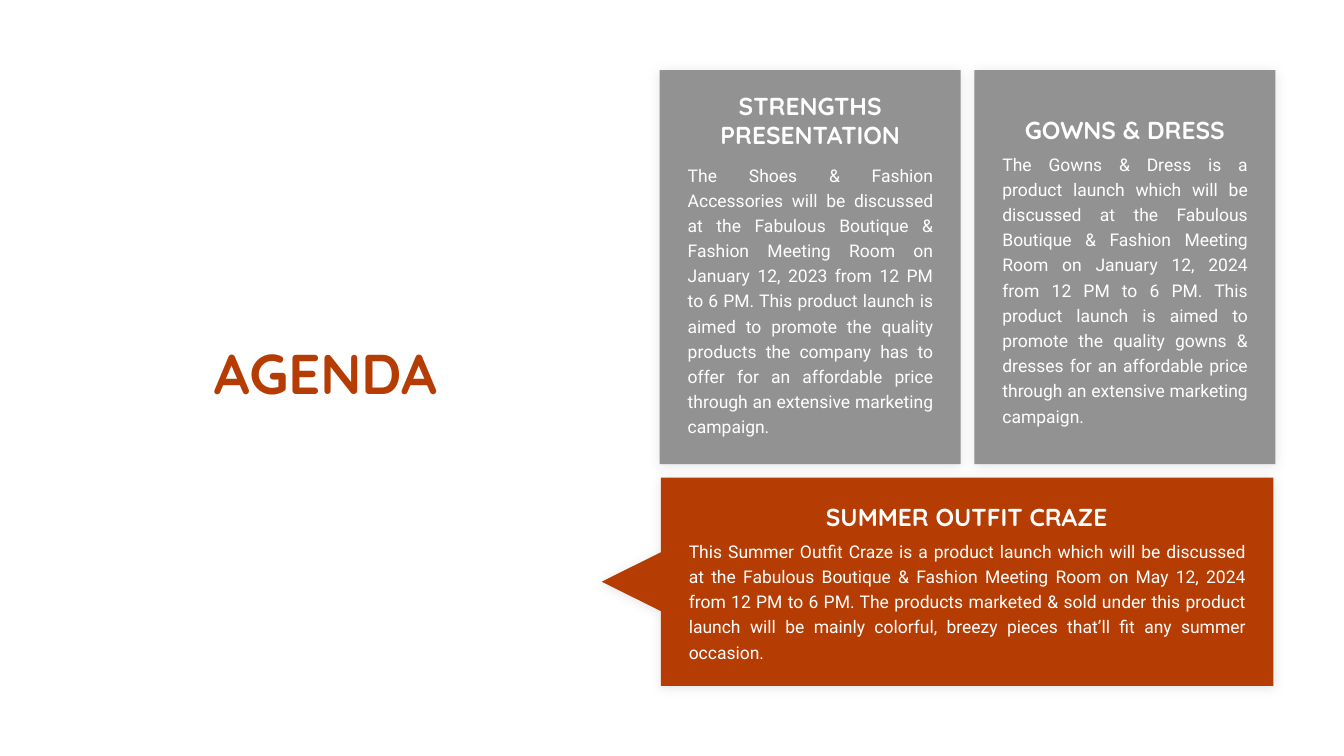
from dataclasses import dataclass

from lxml import etree
from pptx import Presentation
from pptx import util as u
from pptx.dml.color import RGBColor
from pptx.enum import shapes, text
from pptx.oxml import ns

RUST, GRAY, WHITE = "B53D04", "929292", "FFFFFF"
CARD_TOP, CARD_W, CARD_H = 100, 430, 563


@dataclass
class Style:
    font: str
    size: float
    color: str
    bold: bool
    align: text.PP_ALIGN
    space: float


@dataclass
class Label:
    words: str
    left: float
    top: float
    width: float
    height: float
    style: Style


HEAD = Style("Quicksand", 35, WHITE, True, text.PP_ALIGN.CENTER, 0.7)
STACK = Style("Quicksand", 35, WHITE, True, text.PP_ALIGN.CENTER, 1.0)
BODY = Style("Roboto", 25, WHITE, False, text.PP_ALIGN.JUSTIFY, 1.2)
TITLE = Style("Quicksand", 80, RUST, True, text.PP_ALIGN.CENTER, 0.8)

CARDS = [1392, 942.5]
CALLOUT = [(944, 682.5), (944, 789), (859.7, 831), (944, 873),
           (944, 980), (1819, 980), (1819, 682.5)]

LABELS = [
    Label("AGENDA", 250, 467.5, 430, 145, TITLE),
    Label("STRENGTHS\nPRESENTATION", 942.5, 126, CARD_W, 92, STACK),
    Label("The Shoes & Fashion Accessories will be discussed at the Fabulous "
          "Boutique & Fashion Meeting Room on January 12, 2023 from 12 PM to "
          "6 PM. This product launch is aimed to promote the quality products "
          "the company has to offer for an affordable price through an "
          "extensive marketing campaign.", 978.5, 217, 358.5, 420, BODY),
    Label("GOWNS & DRESS", 1392, 166, CARD_W, 50, HEAD),
    Label("The Gowns & Dress is a product launch which will be discussed at "
          "the Fabulous Boutique & Fashion Meeting Room on January 12, 2024 "
          "from 12 PM to 6 PM. This product launch is aimed to promote the "
          "quality gowns & dresses for an affordable price through an "
          "extensive marketing campaign.", 1428, 219, 358.5, 385, BODY),
    Label("SUMMER OUTFIT CRAZE", 1046, 718, 670, 50, HEAD),
    Label("This Summer Outfit Craze is a product launch which will be "
          "discussed at the Fabulous Boutique & Fashion Meeting Room on May "
          "12, 2024 from 12 PM to 6 PM. The products marketed & sold under "
          "this product launch will be mainly colorful, breezy pieces that’ll "
          "fit any summer occasion.", 980, 768.5, 803.5, 176, BODY),
]


def paint(target, color: str) -> None:
    """Apply a hex colour to a fill or font colour."""
    target.rgb = RGBColor.from_string(color)


def finish(shape, color: str) -> None:
    """Fill a shape, drop its line and give it a soft shadow."""
    shape.fill.solid()
    paint(shape.fill.fore_color, color)
    shape.line.fill.background()
    shape.shadow.inherit = False
    effects = shape._element.spPr.find(ns.qn("a:effectLst"))
    shade = etree.SubElement(
        effects, ns.qn("a:outerShdw"), blurRad=str(u.Pt(17)),
        dist=str(u.Pt(2)), dir="5400000", algn="ctr", rotWithShape="0")
    tint = etree.SubElement(shade, ns.qn("a:srgbClr"), val="000000")
    etree.SubElement(tint, ns.qn("a:alpha"), val="10000")


def draw_card(slide, left: float) -> None:
    """Draw one gray card at the given left edge."""
    card = slide.shapes.add_shape(
        shapes.MSO_SHAPE.RECTANGLE, u.Pt(left), u.Pt(CARD_TOP),
        u.Pt(CARD_W), u.Pt(CARD_H))
    finish(card, GRAY)


def draw_callout(slide) -> None:
    """Draw the rust panel that points left to the title."""
    points = [(u.Pt(x), u.Pt(y)) for x, y in CALLOUT]
    outline = slide.shapes.build_freeform(*points[0])
    outline.add_line_segments(points[1:], close=True)
    finish(outline.convert_to_shape(), RUST)


def draw_label(slide, label: Label) -> None:
    """Write one text box in its style."""
    box = slide.shapes.add_textbox(
        u.Pt(label.left), u.Pt(label.top),
        u.Pt(label.width), u.Pt(label.height))
    frame, style = box.text_frame, label.style
    frame.text = label.words
    frame.word_wrap = True
    frame.vertical_anchor = text.MSO_ANCHOR.MIDDLE
    frame.margin_left = frame.margin_right = u.Pt(4)
    frame.margin_top = frame.margin_bottom = u.Pt(4)
    for line in frame.paragraphs:
        line.alignment = style.align
        line.line_spacing = style.space
        for run in line.runs:
            run.font.name = style.font
            run.font.size = u.Pt(style.size)
            run.font.bold = style.bold
            paint(run.font.color, style.color)


def main() -> None:
    """Build the agenda slide and save it."""
    deck = Presentation()
    deck.slide_width, deck.slide_height = u.Pt(1920), u.Pt(1080)
    slide = deck.slides.add_slide(deck.slide_layouts[6])
    draw_callout(slide)
    for left in CARDS:
        draw_card(slide, left)
    for label in LABELS:
        draw_label(slide, label)
    deck.save("out.pptx")


if __name__ == "__main__":
    main()
